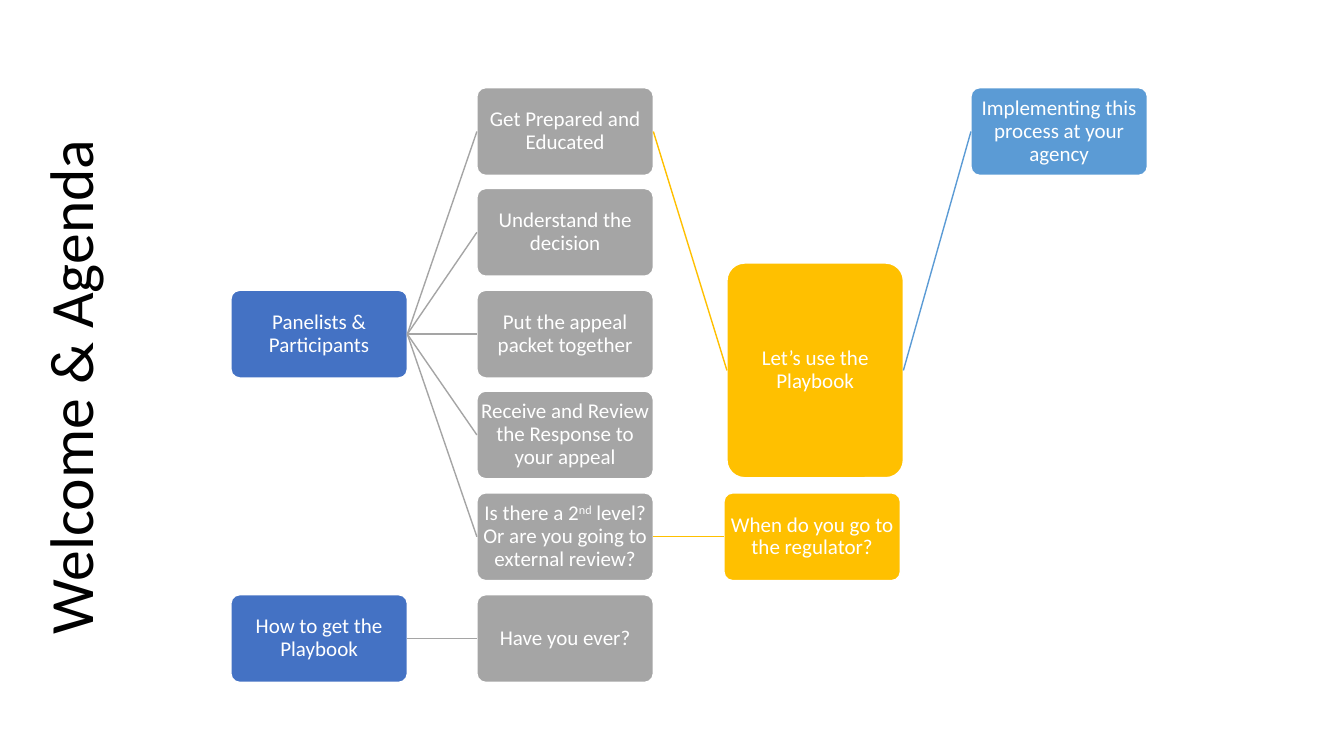
from pptx import Presentation
from pptx.dml.color import RGBColor
from pptx.enum.shapes import MSO_CONNECTOR, MSO_SHAPE
from pptx.enum.text import MSO_ANCHOR, MSO_AUTO_SIZE, PP_ALIGN
from pptx.oxml.ns import qn
from pptx.util import Pt
from lxml import etree

ROUNDED = MSO_SHAPE.ROUNDED_RECTANGLE
STRAIGHT = MSO_CONNECTOR.STRAIGHT
MIDDLE = MSO_ANCHOR.MIDDLE
FIXED = MSO_AUTO_SIZE.NONE
LEFT, CENTER = PP_ALIGN.LEFT, PP_ALIGN.CENTER
LEFT_SITE, RIGHT_SITE = 1, 3
TITLE_ONLY = 5
EMU_PER_PX = 9144

BLUE, GRAY, GOLD, SKY = "4472C4", "A5A5A5", "FFC000", "5B9BD5"
WHITE, BLACK = "FFFFFF", "000000"
BOX_WIDTH, BOX_HEIGHT = 175, 87


def px(length):
    return length * EMU_PER_PX


def color(hex_code):
    return RGBColor.from_string(hex_code)


def column(index):
    return 229 + 2447 * index // 10


def row(index):
    return 87 + 1006 * index // 10


class AgendaSlide:
    font_name = "Calibri"
    title_size = 44
    box_size = 15

    def __init__(self, presentation):
        self.slide = presentation.slides.add_slide(presentation.slide_layouts[TITLE_ONLY])

    def style_text(self, frame, size, hex_code, alignment):
        frame.word_wrap = True
        frame.auto_size = FIXED
        frame.vertical_anchor = MIDDLE
        for paragraph in frame.paragraphs:
            paragraph.alignment = alignment
            paragraph.line_spacing = 0.9
            for run in paragraph.runs:
                run.font.name = self.font_name
                run.font.size = Pt(size)
                run.font.color.rgb = color(hex_code)

    def title(self, text, left, top, width, height):
        heading = self.slide.shapes.title
        heading.left, heading.top = px(left), px(top)
        heading.width, heading.height = px(width), px(height)
        heading.rotation = 270
        heading.text_frame.text = text
        self.style_text(heading.text_frame, self.title_size, BLACK, LEFT)

    def box(self, text, fill, left, top, height=BOX_HEIGHT):
        topic = self.slide.shapes.add_shape(
            ROUNDED, px(left), px(top), px(BOX_WIDTH), px(height))
        topic.adjustments[0] = 0.1
        topic.shadow.inherit = False
        topic.fill.solid()
        topic.fill.fore_color.rgb = color(fill)
        topic.line.color.rgb = color(WHITE)
        topic.line.width = Pt(1)
        frame = topic.text_frame
        frame.margin_left = frame.margin_right = 0
        frame.margin_top = frame.margin_bottom = 0
        for position, part in enumerate(text.split("^")):
            run = frame.paragraphs[0].add_run()
            run.text = part
            if position % 2:
                run._r.get_or_add_rPr().set("baseline", "30000")
        self.style_text(frame, self.box_size, WHITE, CENTER)
        return topic

    def link(self, source, target, hex_code):
        branch = self.slide.shapes.add_connector(STRAIGHT, 0, 0, 0, 0)
        branch.begin_connect(source, RIGHT_SITE)
        branch.end_connect(target, LEFT_SITE)
        branch.line.color.rgb = color(hex_code)
        branch.line.width = Pt(1)
        etree.SubElement(branch._element.spPr, qn("a:effectLst"))


def main():
    presentation = Presentation()
    presentation.slide_width, presentation.slide_height = px(1333), px(750)
    agenda = AgendaSlide(presentation)
    agenda.title("Welcome & Agenda", -191, 303, 527, 145)

    panelists = agenda.box("Panelists & Participants", BLUE, column(0), row(2))
    how_to_get = agenda.box("How to get the Playbook", BLUE, column(0), row(5))
    step_texts = [
        "Get Prepared and Educated",
        "Understand the decision",
        "Put the appeal packet together",
        "Receive and Review the Response to your appeal",
        "Is there a 2^nd^ level? Or are you going to external review?",
        "Have you ever?",
    ]
    steps = [agenda.box(text, GRAY, column(1), row(index))
             for index, text in enumerate(step_texts)]
    playbook = agenda.box("Let’s use the Playbook", GOLD, 721, 261, 213)
    regulator = agenda.box("When do you go to the regulator?", GOLD, column(2), row(4))
    implementing = agenda.box(
        "Implementing this process at your agency", SKY, column(3), row(0))

    for step in steps[:5]:
        agenda.link(panelists, step, GRAY)
    agenda.link(how_to_get, steps[5], GRAY)
    agenda.link(steps[0], playbook, GOLD)
    agenda.link(steps[4], regulator, GOLD)
    agenda.link(playbook, implementing, SKY)

    presentation.save("out.pptx")


if __name__ == "__main__":
    main()
